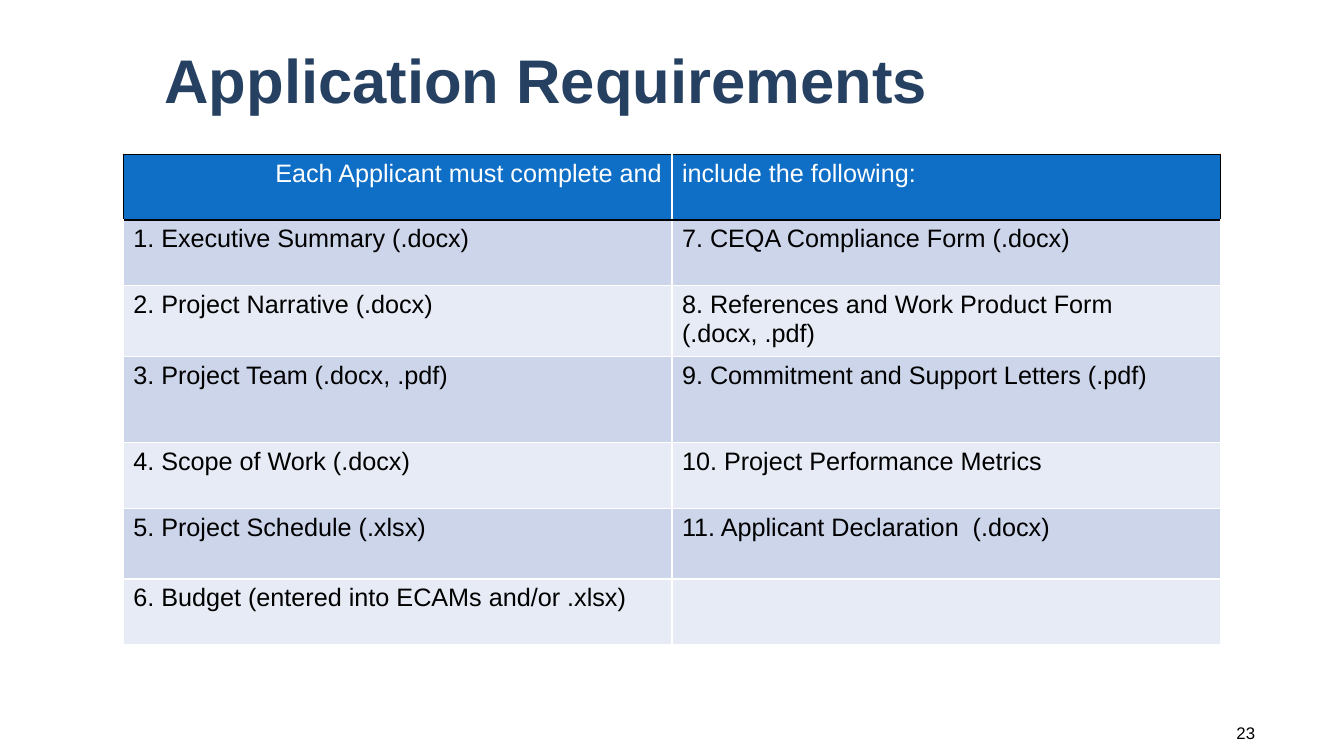
from lxml.etree import SubElement
from pptx import Presentation
from pptx.dml.color import RGBColor
from pptx.enum.text import MSO_ANCHOR, PP_ALIGN
from pptx.oxml.ns import qn
from pptx.util import Pt

REQUIREMENTS = [
    ("1. Executive Summary (.docx)", "7. CEQA Compliance Form (.docx)"),
    ("2. Project Narrative (.docx)", "8. References and Work Product Form (.docx, .pdf)"),
    ("3. Project Team (.docx, .pdf)", "9. Commitment and Support Letters (.pdf)"),
    ("4. Scope of Work (.docx)", "10. Project Performance Metrics"),
    ("5. Project Schedule (.xlsx)", "11. Applicant Declaration  (.docx)"),
    ("6. Budget (entered into ECAMs and/or .xlsx)", ""),
]
HEADER = ("Each Applicant must complete and", "include the following:")
ROW_HEIGHTS = [47, 47, 47, 61.5, 47, 50.4, 47]


def color(code):
    return RGBColor.from_string(code)


class SlideBuilder:
    font = "Arial"
    navy, blue, black, white = "254061", "0F6FC6", "000000", "FFFFFF"
    bands = ("CCD5EA", "E7EBF5")

    def __init__(self, deck):
        self.page = deck.slides.add_slide(deck.slide_layouts[6])

    def style(self, para, size, code, bold=False, align=PP_ALIGN.LEFT):
        para.alignment = align
        para.font.name = self.font
        para.font.size = Pt(size)
        para.font.bold = bold
        para.font.color.rgb = color(code)

    def text(self, left, top, width, height, words, size, code, **look):
        box = self.page.shapes.add_textbox(Pt(left), Pt(top), Pt(width), Pt(height))
        frame = box.text_frame
        frame.word_wrap = True
        frame.vertical_anchor = MSO_ANCHOR.MIDDLE
        para = frame.paragraphs[0]
        para.text = words
        self.style(para, size, code, **look)
        return para

    def border(self, cell, **sides):
        properties = cell._tc.get_or_add_tcPr()
        for side in "LRTB":
            if side in sides:
                line = SubElement(properties, qn(f"a:ln{side}"), w=str(Pt(1)))
                fill = SubElement(line, qn("a:solidFill"))
                SubElement(fill, qn("a:srgbClr"), val=sides[side])

    def cell(self, cell, words, fill, code, align, **sides):
        self.border(cell, **sides)
        cell.fill.solid()
        cell.fill.fore_color.rgb = color(fill)
        cell.text = words
        self.style(cell.text_frame.paragraphs[0], 18, code, align=align)

    def table(self, left, top, width, header, rows, heights):
        frame = self.page.shapes.add_table(len(rows) + 1, len(header), Pt(left), Pt(top),
                                           Pt(width), Pt(sum(heights)))
        table = frame.table
        for row, height in zip(table.rows, heights):
            row.height = Pt(height)

        # Header: one black outline around both cells
        outline = {"T": self.black, "B": self.black}
        self.cell(table.cell(0, 0), header[0], self.blue, self.white, PP_ALIGN.RIGHT,
                  L=self.black, **outline)
        self.cell(table.cell(0, 1), header[1], self.blue, self.white, PP_ALIGN.LEFT,
                  R=self.black, **outline)

        # Body: alternating bands with white rules
        for number, row in enumerate(rows):
            above = self.white if number else self.black
            for column, words in enumerate(row):
                self.cell(table.cell(number + 1, column), words, self.bands[number % 2],
                          self.black, PP_ALIGN.LEFT,
                          L=self.white, R=self.white, T=above, B=self.white)


def main():
    deck = Presentation()
    deck.slide_width, deck.slide_height = Pt(960), Pt(540)
    slide = SlideBuilder(deck)

    # Title
    title = slide.text(110.4, 18.7, 784, 82, "Application Requirements", 44, slide.navy, bold=True)
    title.line_spacing = 0.9

    # Requirements table
    slide.table(88, 110.2, 784, HEADER, REQUIREMENTS, ROW_HEIGHTS)

    # Page number
    slide.text(762, 509, 141.6, 28.8, "23", 12, slide.black, align=PP_ALIGN.RIGHT)

    deck.save("out.pptx")


if __name__ == "__main__":
    main()
